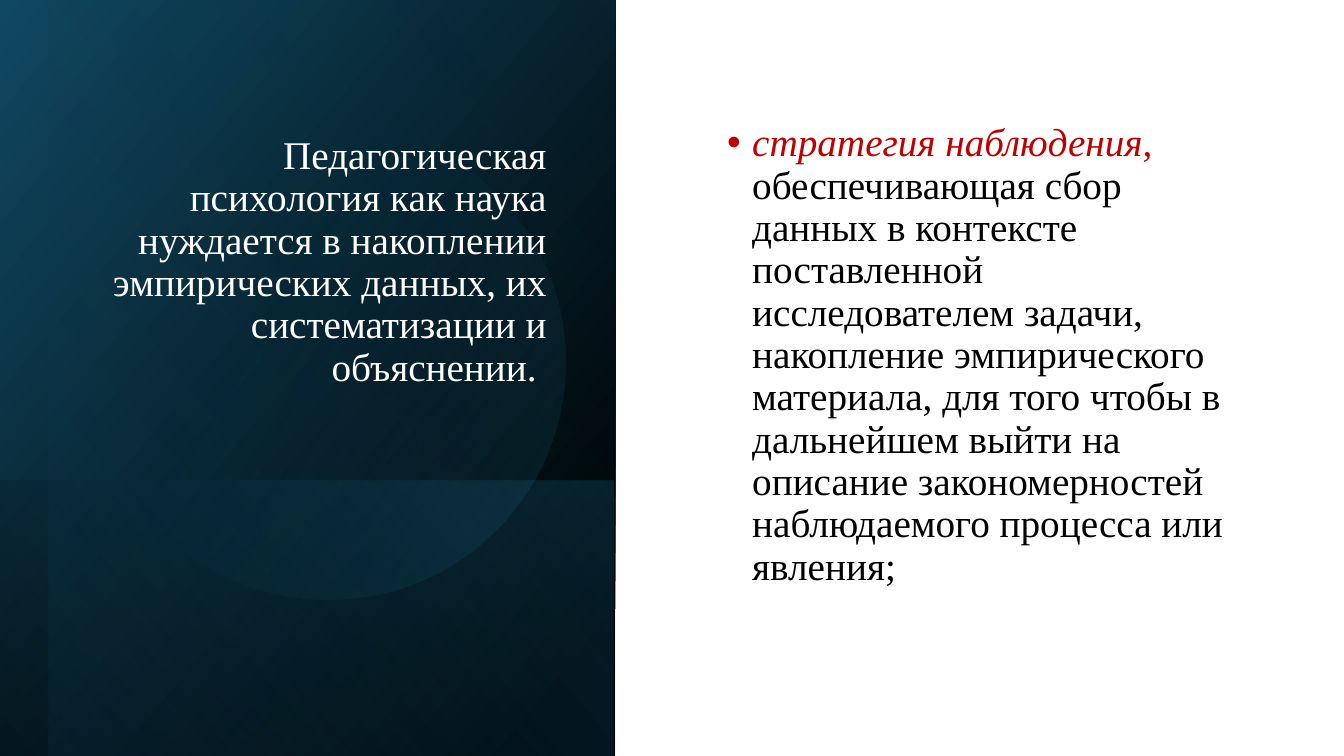
from lxml import etree
from pptx import Presentation
from pptx.dml.color import RGBColor
from pptx.enum.shapes import MSO_SHAPE
from pptx.enum.text import MSO_ANCHOR, MSO_AUTO_SIZE, PP_ALIGN
from pptx.oxml.ns import qn
from pptx.util import Pt

RECT, OVAL = MSO_SHAPE.RECTANGLE, MSO_SHAPE.OVAL
BOTTOM, MIDDLE = MSO_ANCHOR.BOTTOM, MSO_ANCHOR.MIDDLE
LEFT, RIGHT = PP_ALIGN.LEFT, PP_ALIGN.RIGHT
NO_FIT = MSO_AUTO_SIZE.NONE
PX = 9525
COLORS = {"black": "000000", "navy": "104862", "teal": "156082",
          "sky": "46B1E1", "red": "C00000", "white": "FFFFFF"}


def set_frame(box, place, anchor, align, foot):
    """Place a text box and return its first paragraph; foot is the bottom inset."""
    box.left, box.top, box.width, box.height = [n * PX for n in place]
    frame = box.text_frame
    frame.word_wrap = True
    frame.auto_size = NO_FIT
    frame.vertical_anchor = anchor
    frame.margin_bottom = foot * PX
    para = frame.paragraphs[0]
    para.alignment = align
    para.line_spacing = 0.9
    return para


def add_run(para, text, color, italic=False):
    run = para.add_run()
    run.text = text
    font = run.font
    font.name = "Times New Roman"
    font.size = Pt(28)
    font.italic = italic
    font.color.rgb = RGBColor.from_string(COLORS[color])


deck = Presentation()
deck.slide_width, deck.slide_height = 1280 * PX, 720 * PX
slide = deck.slides.add_slide(deck.slide_layouts[5])
shapes = slide.shapes
title = shapes.title

# Left panel: kind, place, turn, flip, angle, stops of (position, color, opacity)
layers = [
    (RECT, (-67, 67, 720, 586), 90, True, 50,
     [(8, "black", 100), (100, "navy", 100)]),
    (RECT, (160, 296, 263, 586), 90, True, 130,
     [(2, "teal", 29), (100, "black", 30)]),
    (RECT, (-44, 89, 720, 540), 90, True, 130,
     [(0, "black", 0), (99, "teal", 11)]),
    (OVAL, (86, 118, 453, 453), 101.6, False, 290,
     [(39, "teal", 0), (100, "sky", 15)]),
]
for kind, place, turn, flip, angle, stops in layers:
    layer = shapes.add_shape(kind, *[n * PX for n in place])
    layer.rotation = turn
    layer.shadow.inherit = False
    layer.line.fill.background()
    props = layer._element.spPr
    if flip:
        props.find(qn("a:xfrm")).set("flipH", "1")
    layer.fill.gradient()
    layer.fill.gradient_angle = 360 - angle
    for stop, (spot, color, _) in zip(layer.fill.gradient_stops, stops):
        stop.position = spot / 100
        stop.color.rgb = RGBColor.from_string(COLORS[color])
    for tint, (_, _, alpha) in zip(props.iter(qn("a:srgbClr")), stops):
        etree.SubElement(tint, qn("a:alpha")).set("val", str(alpha * 1000))

# Title in front of the panel
shapes._spTree.append(title._element)
para = set_frame(title, (86, 61, 444, 355), BOTTOM, RIGHT, 45)
add_run(para, "Педагогическая психология как наука нуждается в накоплении "
        "эмпирических данных, их систематизации и объяснении. ", "white")

# Bulleted body
body = shapes.add_textbox(0, 0, PX, PX)
para = set_frame(body, (683, 68, 511, 583), MIDDLE, LEFT, 46)
para.space_before = Pt(10)
add_run(para, "стратегия наблюдения", "red", True)
add_run(para, ", ", "red")
add_run(para, "обеспечивающая сбор данных в контексте поставленной "
        "исследователем задачи, накопление эмпирического материала, для того "
        "чтобы в дальнейшем выйти на описание закономерностей наблюдаемого "
        "процесса или явления;", "black")
props = para._p.get_or_add_pPr()
props.set("marL", str(24 * PX))
props.set("indent", str(-24 * PX))
etree.SubElement(props, qn("a:buFont")).set("typeface", "Arial")
etree.SubElement(props, qn("a:buChar")).set("char", "•")

deck.save("out.pptx")
